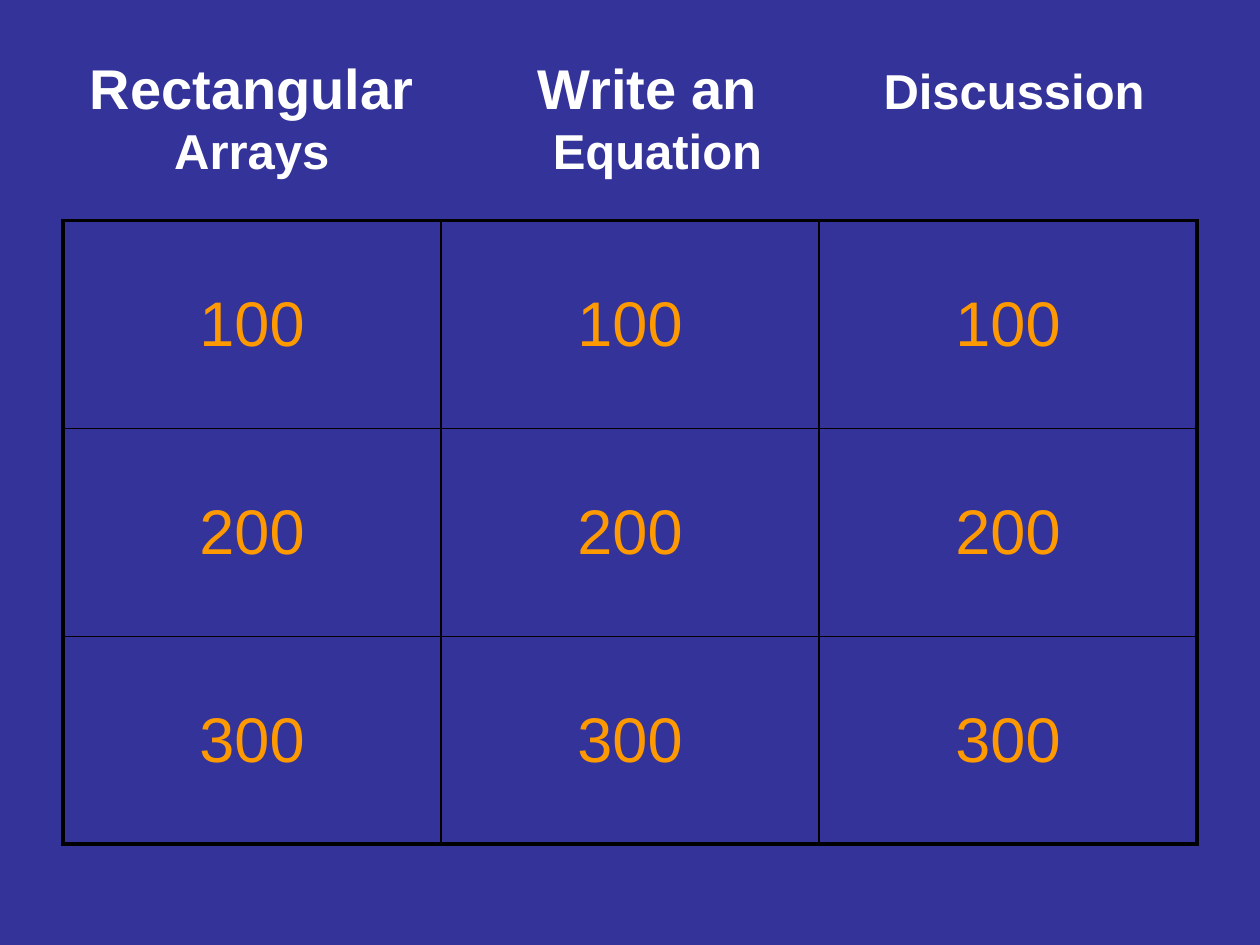
from lxml.etree import SubElement
from pptx import Presentation
from pptx.dml.color import RGBColor as Color
from pptx.enum.text import MSO_ANCHOR as Anchor, PP_ALIGN as Align
from pptx.oxml.ns import qn
from pptx.util import Inches, Pt

COLORS = {"background": "333399", "heading": "FFFFFF", "points": "FF9900", "border": "000000"}
ROWS, COLUMNS = 3, 3
OUTER, INNER = 2.25, 1


class Board:
    """Holds the style and the slide that is being filled."""

    font = "Arial"

    def __init__(self, presentation):
        self.width, self.height = presentation.slide_width, presentation.slide_height
        self.slide = presentation.slides.add_slide(presentation.slide_layouts[6])
        fill = self.slide.background.fill
        fill.solid()
        fill.fore_color.rgb = Color.from_string(COLORS["background"])

    def area(self, left, top, width, height):
        """Turn shares of the slide's size into lengths."""
        return [round(share * size) for share, size in zip(
            (left, top, width, height), (self.width, self.height) * 2)]

    def add_run(self, paragraph, text, color, **style):
        run = paragraph.add_run()
        run.text = text
        for name, value in {"name": self.font, **style}.items():
            setattr(run.font, name, value)
        run.font.color.rgb = Color.from_string(COLORS[color])

    def add_headings(self, lines, *shares):
        """Write each line's headings at its own centred tab stops."""
        frame = self.slide.shapes.add_textbox(*self.area(*shares)).text_frame
        frame.word_wrap = True
        frame.vertical_anchor = Anchor.MIDDLE
        for index, headings in enumerate(lines):
            paragraph = frame.add_paragraph() if index else frame.paragraphs[0]
            paragraph.alignment = Align.LEFT
            tabs = SubElement(paragraph._p.get_or_add_pPr(), qn("a:tabLst"))
            for text, center, size in headings:
                position = Inches(center) - frame.margin_left
                SubElement(tabs, qn("a:tab"), pos=str(position), algn="ctr")
                self.add_run(paragraph, "\t" + text, "heading", size=Pt(size), bold=True)

    def add_borders(self, cell, row, column):
        """Draw thick lines on the outside of the table, thin ones inside."""
        properties = cell._tc.get_or_add_tcPr()
        edges = {"L": column == 0, "R": column == COLUMNS - 1,
                 "T": row == 0, "B": row == ROWS - 1}
        for side, outside in edges.items():
            width = Pt(OUTER if outside else INNER)
            line = SubElement(properties, qn(f"a:ln{side}"), w=str(width))
            fill = SubElement(line, qn("a:solidFill"))
            SubElement(fill, qn("a:srgbClr"), val=COLORS["border"])

    def add_points(self, *shares):
        table = self.slide.shapes.add_table(ROWS, COLUMNS, *self.area(*shares)).table
        table.first_row = table.horz_banding = False
        for row in range(ROWS):
            for column in range(COLUMNS):
                cell = table.cell(row, column)
                cell.vertical_anchor = Anchor.MIDDLE
                self.add_borders(cell, row, column)
                cell.fill.background()
                paragraph = cell.text_frame.paragraphs[0]
                paragraph.alignment = Align.CENTER
                paragraph.space_before = Pt(7.2)
                self.add_run(paragraph, str(100 * (row + 1)), "points", size=Pt(36))


def main():
    presentation = Presentation()
    presentation.slide_width, presentation.slide_height = Inches(10), Inches(7.5)
    board = Board(presentation)

    # Category headings: text, centre in inches, size in points
    board.add_headings([
        [("Rectangular", 2, 32), ("Write an", 5.14, 32), ("Discussion", 8.05, 28)],
        [("Arrays", 2, 28), ("Equation", 5.22, 28)],
    ], 0, 0.04, 1, 1 / 6)

    # Point values
    board.add_points(0.05, 1.75 / 7.5, 0.9, 0.66)

    presentation.save("out.pptx")


if __name__ == "__main__":
    main()
